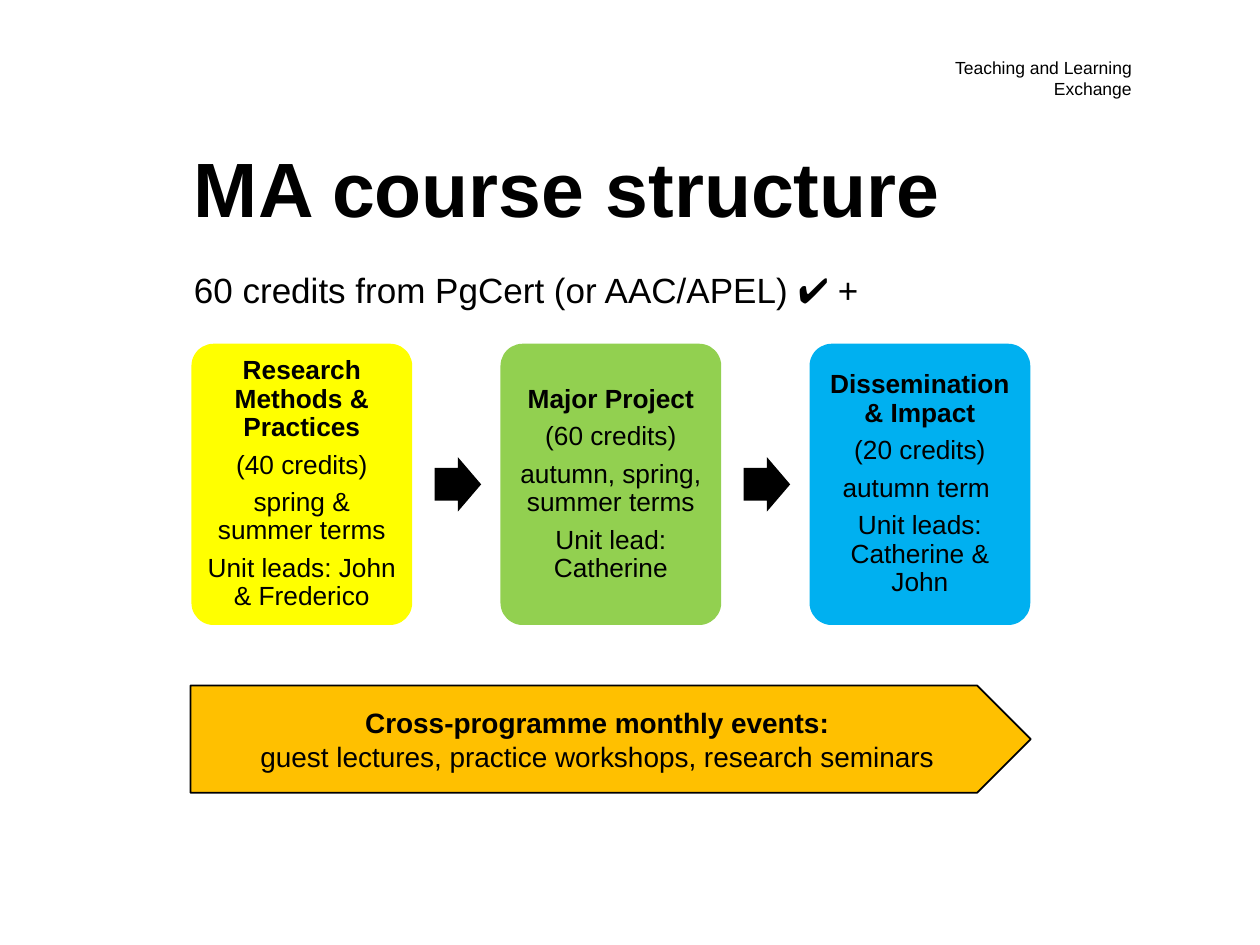
import pptx
import pptx.util
from pptx.dml.color import RGBColor
from pptx.enum.shapes import MSO_SHAPE
from pptx.enum.text import MSO_ANCHOR, PP_ALIGN
from pptx.util import Cm, Pt

BLACK = RGBColor(0x00, 0x00, 0x00)
YELLOW = RGBColor(0xFF, 0xFF, 0x00)
GREEN = RGBColor(0x92, 0xD0, 0x50)
BLUE = RGBColor(0x00, 0xB0, 0xF0)
AMBER = RGBColor(0xFF, 0xC0, 0x00)


class CourseSlide:
    """Holds the text style and the page being built."""

    font_name = "Arial"

    def __init__(self, page):
        self.page = page

    def fill_text(self, frame, lines, size, bold_first=False,
                  align=PP_ALIGN.LEFT, spacing=None, after=None):
        for index, line in enumerate(lines):
            para = frame.paragraphs[0] if index == 0 else frame.add_paragraph()
            para.text = line
            para.alignment = align
            para.line_spacing = spacing
            para.space_after = after
            para.font.name = self.font_name
            para.font.size = Pt(size)
            para.font.bold = bold_first and index == 0
            para.font.color.rgb = BLACK

    def text(self, left, top, width, height, line, size, bold=False,
             align=PP_ALIGN.LEFT):
        box = self.page.shapes.add_textbox(
            Cm(left), Cm(top), Cm(width), Cm(height))
        box.text_frame.word_wrap = True
        self.fill_text(box.text_frame, [line], size, bold, align)

    def shape(self, kind, left, top, width, height, fill, adjustments=()):
        shape = self.page.shapes.add_shape(
            kind, Cm(left), Cm(top), Cm(width), Cm(height))
        shape.shadow.inherit = False
        shape.fill.solid()
        shape.fill.fore_color.rgb = fill
        shape.line.fill.background()
        for index, value in enumerate(adjustments):
            shape.adjustments[index] = value
        return shape

    def unit(self, left, top, width, height, fill, lines):
        card = self.shape(MSO_SHAPE.ROUNDED_RECTANGLE,
                          left, top, width, height, fill, [0.1])
        frame = card.text_frame
        frame.word_wrap = True
        frame.vertical_anchor = MSO_ANCHOR.MIDDLE
        frame.margin_left = frame.margin_right = Cm(0.15)
        frame.margin_top = frame.margin_bottom = Cm(0.15)
        self.fill_text(frame, lines, 15, True, PP_ALIGN.CENTER, 0.9, Pt(5.25))

    def arrow(self, left, top, width, height):
        self.shape(MSO_SHAPE.RIGHT_ARROW, left, top, width, height,
                   BLACK, [0.6, 0.5])

    def banner(self, left, top, width, height, fill, lines):
        banner = self.shape(MSO_SHAPE.PENTAGON, left, top, width, height, fill)
        banner.line.color.rgb = BLACK
        banner.line.width = Pt(1)
        banner.text_frame.word_wrap = False
        banner.text_frame.vertical_anchor = MSO_ANCHOR.MIDDLE
        self.fill_text(banner.text_frame, lines, 16, True, PP_ALIGN.CENTER)


UNITS = [
    (YELLOW, ["Research Methods & Practices", "(40 credits)",
              "spring & summer terms", "Unit leads: John & Frederico"]),
    (GREEN, ["Major Project", "(60 credits)",
             "autumn, spring, summer terms", "Unit lead:\vCatherine"]),
    (BLUE, ["Dissemination & Impact", "(20 credits)",
            "autumn term ", "Unit leads: Catherine & John"]),
]


def main():
    deck = pptx.Presentation()
    deck.slide_width, deck.slide_height = Cm(25.4), Cm(19.05)
    slide = CourseSlide(deck.slides.add_slide(deck.slide_layouts[6]))

    # Header and headings
    slide.text(17.37, 1.03, 5.69, 1.05, "Teaching and Learning Exchange", 10,
               align=PP_ALIGN.RIGHT)
    slide.text(3.66, 2.7, 21, 2.05, "MA course structure", 44, bold=True)
    slide.text(3.66, 5.28, 21, 1.1,
               "60 credits from PgCert (or AAC/APEL) ✔ +", 20)

    # Units in sequence, with an arrow between neighbours
    left, top, width, height, pitch = 3.86, 6.93, 4.45, 5.67, 6.23
    arrow_width, arrow_height = 0.94, 1.1
    for index, (fill, lines) in enumerate(UNITS):
        x = left + index * pitch
        if index:
            slide.arrow(x - 1.33, top + (height - arrow_height) / 2,
                        arrow_width, arrow_height)
        slide.unit(x, top, width, height, fill, lines)

    # Events running across all units
    slide.banner(3.84, 13.82, 16.94, 2.16, AMBER,
                 ["Cross-programme monthly events:",
                  "guest lectures, practice workshops, research seminars"])

    deck.save("out.pptx")


if __name__ == "__main__":
    main()
